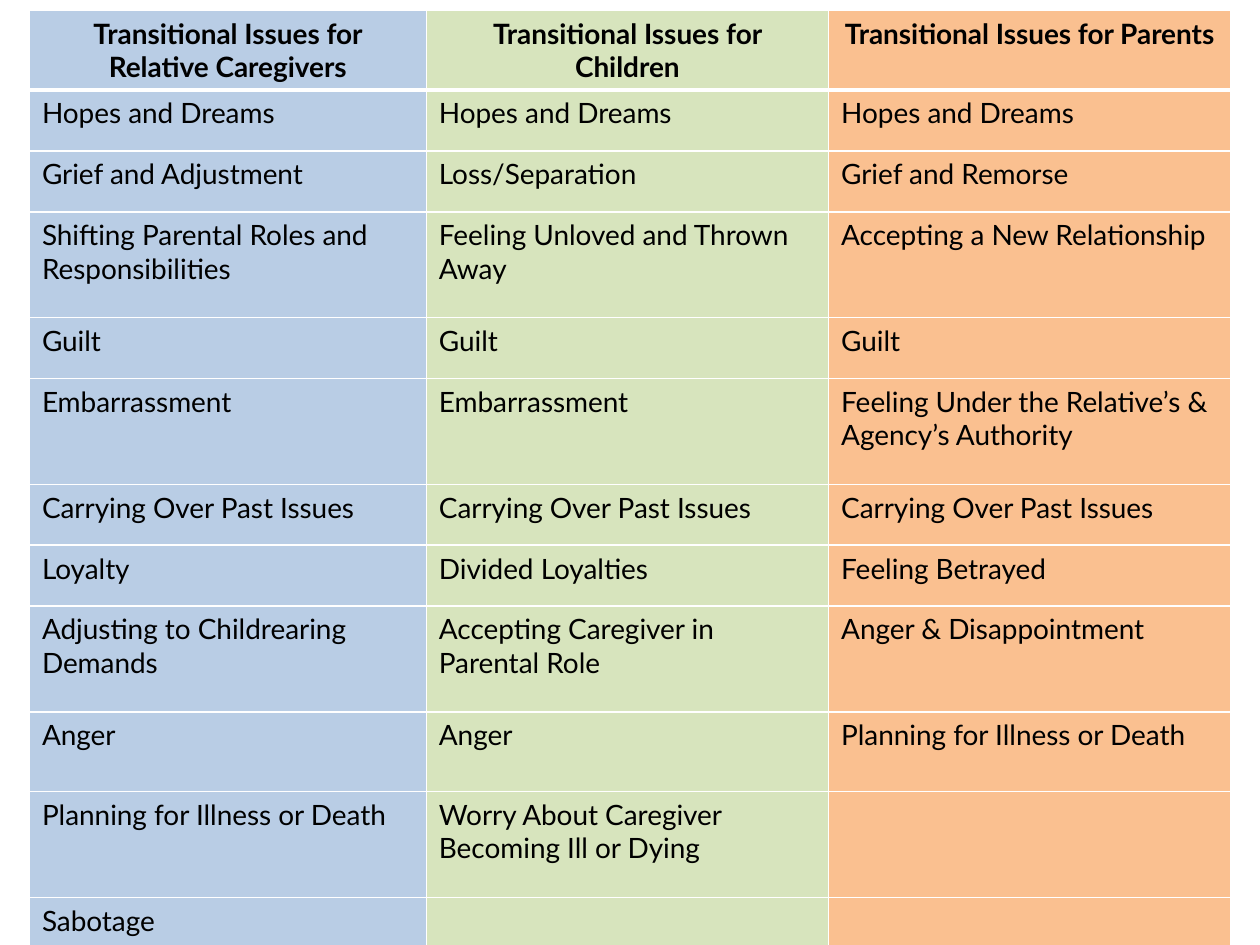
import pptx
import pptx.dml.color
import pptx.enum.text
import pptx.oxml
import pptx.oxml.ns
import pptx.util

Pt = pptx.util.Pt
ALIGN = pptx.enum.text.PP_ALIGN

COLUMN_FILLS = ["B9CDE5", "D7E4BD", "FAC090"]
COLUMN_WIDTHS = [226.8, 229.9, 229.9]
SINGLE, DOUBLE = 34.8, 60.5

# Row height, then the text of each column
ROWS = [
    (44.8, "Transitional Issues for Relative Caregivers",
     "Transitional Issues for Children", "Transitional Issues for Parents"),
    (SINGLE, "Hopes and Dreams", "Hopes and Dreams", "Hopes and Dreams"),
    (SINGLE, "Grief and Adjustment", "Loss/Separation", "Grief and Remorse"),
    (DOUBLE, "Shifting Parental Roles and Responsibilities",
     "Feeling Unloved and Thrown Away", "Accepting a New Relationship"),
    (SINGLE, "Guilt", "Guilt", "Guilt"),
    (DOUBLE, "Embarrassment", "Embarrassment",
     "Feeling Under the Relative’s & Agency’s Authority"),
    (SINGLE, "Carrying Over Past Issues", "Carrying Over Past Issues",
     "Carrying Over Past Issues"),
    (SINGLE, "Loyalty", "Divided Loyalties", "Feeling Betrayed"),
    (DOUBLE, "Adjusting to Childrearing Demands",
     "Accepting Caregiver in Parental Role", "Anger & Disappointment"),
    (45.5, "Anger", "Anger", "Planning for Illness or Death"),
    (DOUBLE, "Planning for Illness or Death",
     "Worry About Caregiver Becoming Ill or Dying", ""),
    (SINGLE, "Sabotage", "", ""),
]


def color(value):
    return pptx.dml.color.RGBColor.from_string(value)


def write_text(cell, text, size=16, bold=False, align=ALIGN.LEFT, fill="000000"):
    paragraph = cell.text_frame.paragraphs[0]
    paragraph.alignment = align
    paragraph.font.size = Pt(size)
    if text:
        run = paragraph.add_run()
        run.text = text
        run.font.name = "Lato"
        run.font.size = Pt(size)
        run.font.bold = bold
        run.font.color.rgb = color(fill)


def set_borders(cell, top, bottom, side=1, line="FFFFFF"):
    properties = cell._tc.get_or_add_tcPr()
    widths = [("lnL", side), ("lnR", side), ("lnT", top), ("lnB", bottom)]
    for index, (tag, width) in enumerate(widths):
        border = pptx.oxml.parse_xml(
            f'<a:{tag} {pptx.oxml.ns.nsdecls("a")} w="{int(Pt(width))}">'
            f'<a:solidFill><a:srgbClr val="{line}"/></a:solidFill></a:{tag}>')
        properties.insert(index, border)


def add_issues_table(slide, left, top):
    width = sum(COLUMN_WIDTHS)
    height = sum(row[0] for row in ROWS)
    table = slide.shapes.add_table(
        len(ROWS), len(COLUMN_WIDTHS), Pt(left), Pt(top), Pt(width), Pt(height)).table
    table.horz_banding = False

    for column, column_width in zip(table.columns, COLUMN_WIDTHS):
        column.width = Pt(column_width)

    for row_index, (row_height, *texts) in enumerate(ROWS):
        table.rows[row_index].height = Pt(row_height)
        is_header = row_index == 0
        for column_index, text in enumerate(texts):
            cell = table.cell(row_index, column_index)
            cell.fill.solid()
            cell.fill.fore_color.rgb = color(COLUMN_FILLS[column_index])
            # A thick rule separates the header from the issues
            set_borders(cell, top=3 if row_index == 1 else 1,
                        bottom=3 if is_header else 1)
            write_text(cell, text, bold=is_header,
                       align=ALIGN.CENTER if is_header else ALIGN.LEFT)


def main():
    presentation = pptx.Presentation()
    presentation.slide_width = Pt(720)
    presentation.slide_height = Pt(540)
    slide = presentation.slides.add_slide(presentation.slide_layouts[6])
    add_issues_table(slide, left=16.8, top=6)
    presentation.save("out.pptx")


if __name__ == "__main__":
    main()
